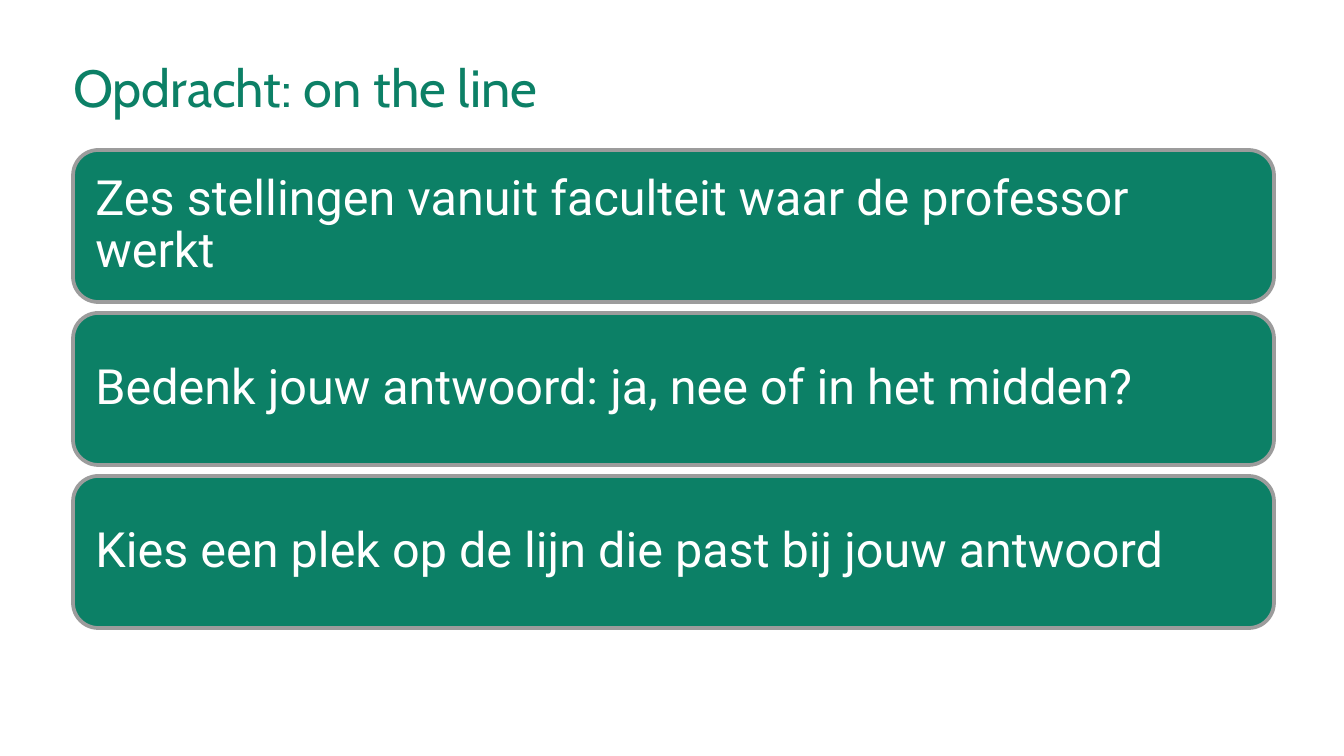
from dataclasses import dataclass

from pptx import Presentation
from pptx.dml.color import RGBColor
from pptx.enum.shapes import MSO_SHAPE
from pptx.enum.text import MSO_ANCHOR, PP_ALIGN
from pptx.util import Inches, Pt

ROUND = MSO_SHAPE.ROUNDED_RECTANGLE
TOP, MIDDLE = MSO_ANCHOR.TOP, MSO_ANCHOR.MIDDLE
LEFT = PP_ALIGN.LEFT
SCALE = Inches(10) / 1344

STEPS = (
    "Zes stellingen vanuit faculteit waar de professor werkt",
    "Bedenk jouw antwoord: ja, nee of in het midden?",
    "Kies een plek op de lijn die past bij jouw antwoord",
)


@dataclass(frozen=True)
class Theme:
    green: RGBColor = RGBColor(0x0C, 0x80, 0x66)
    gray: RGBColor = RGBColor(0x9C, 0x9C, 0x9C)
    white: RGBColor = RGBColor(0xFF, 0xFF, 0xFF)
    head_font: str = "Cabin"
    body_font: str = "Roboto"
    head_size: int = 28
    body_size: int = 26


def px(n):
    return round(n * SCALE)


class Deck:
    def __init__(self, theme, slide):
        self.theme = theme
        self.slide = slide

    def label(self, shape, text, font, size, color, anchor, inset):
        """Fill a shape with one styled paragraph and return it."""
        frame = shape.text_frame
        frame.text = text
        frame.word_wrap = True
        frame.vertical_anchor = anchor
        frame.margin_left = frame.margin_right = px(inset)
        frame.margin_top = frame.margin_bottom = px(inset)
        para = frame.paragraphs[0]
        para.alignment = LEFT
        para.font.name = font
        para.font.size = Pt(size)
        para.font.color.rgb = color
        return para

    def title(self, text, x, y, w, h):
        t = self.theme
        shape = self.slide.shapes.title
        shape.left, shape.top, shape.width, shape.height = map(px, (x, y, w, h))
        para = self.label(shape, text, t.head_font, t.head_size, t.green, TOP, 0)
        para.line_spacing = Pt(32)

    def card(self, text, x, y, w, h):
        t = self.theme
        shape = self.slide.shapes.add_shape(ROUND, *map(px, (x, y, w, h)))
        shape.shadow.inherit = False
        shape.fill.solid()
        shape.fill.fore_color.rgb = t.green
        shape.line.color.rgb = t.gray
        shape.line.width = Pt(2)
        para = self.label(shape, text, t.body_font, t.body_size, t.white, MIDDLE, 15)
        para.line_spacing = 0.9
        para.space_after = Pt(9)


def main():
    prs = Presentation()
    prs.slide_width, prs.slide_height = px(1344), px(756)
    deck = Deck(Theme(), prs.slides.add_slide(prs.slide_layouts[5]))
    left, width = 73, 1201
    deck.title("Opdracht: on the line", left, 58, width, 85)
    top, high, gap = 150, 152, 11
    for i, step in enumerate(STEPS):
        deck.card(step, left, top + i * (high + gap), width, high)
    prs.save("out.pptx")


if __name__ == "__main__":
    main()
